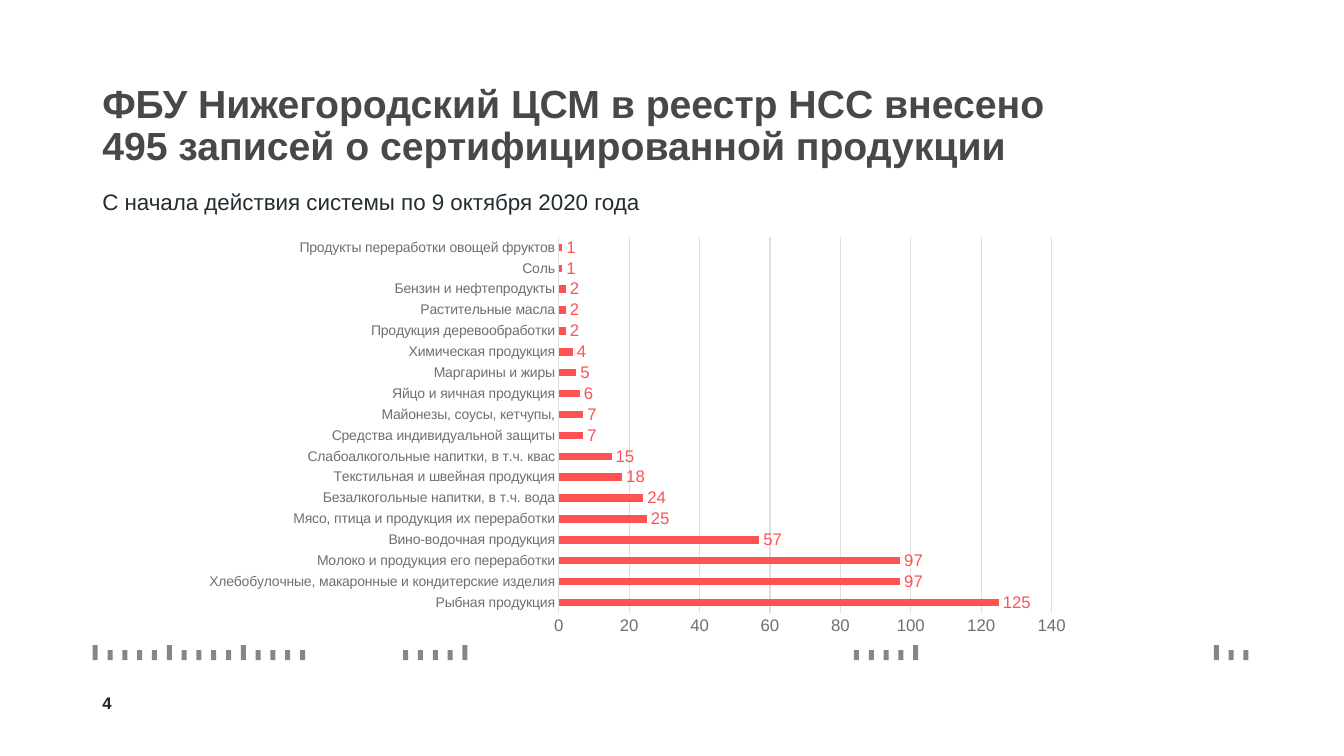
from dataclasses import dataclass

from lxml import etree
from pptx import Presentation
from pptx.chart.data import CategoryChartData
from pptx.dml.color import RGBColor
from pptx.enum.chart import XL_CHART_TYPE, XL_LABEL_POSITION, XL_TICK_MARK
from pptx.enum.shapes import MSO_SHAPE
from pptx.enum.text import MSO_ANCHOR, MSO_AUTO_SIZE
from pptx.oxml.ns import qn
from pptx.slide import Slide
from pptx.text.text import Font
from pptx.util import Pt

BAR = XL_CHART_TYPE.BAR_CLUSTERED
OUTSIDE = XL_LABEL_POSITION.OUTSIDE_END
NO_TICK = XL_TICK_MARK.NONE
RECT = MSO_SHAPE.RECTANGLE
TOP = MSO_ANCHOR.TOP
MIDDLE = MSO_ANCHOR.MIDDLE
GROW = MSO_AUTO_SIZE.SHAPE_TO_FIT_TEXT

FACE = "Arial"
COLORS = {
    "title": "484848",
    "sub": "222D32",
    "page": "212121",
    "axis": "6F6F6F",
    "grid": "DEDEDE",
    "bar": "FF5252",
    "mark": "868686",
}


@dataclass
class Label:
    text: str
    left: float
    top: float
    width: float
    height: float
    size: float
    color: str
    bold: bool = False
    anchor: MSO_ANCHOR = TOP
    grow: bool = False
    space: float = 1.0


@dataclass
class Ruler:
    left: float
    count: int
    tall: tuple[int, ...]


LABELS = [
    Label("ФБУ Нижегородский ЦСМ в реестр НСС внесено \v"
          "495 записей о сертифицированной продукции",
          66, 57, 828, 113.5, 28, "title", bold=True, space=0.9),
    Label("4", 66, 487.5, 51, 29, 12, "page", bold=True, anchor=MIDDLE),
    Label("С начала действия системы по 9 октября 2020 года",
          66, 131, 490, 26.6, 16, "sub", grow=True),
]

RULERS = [
    Ruler(66.2, 15, (0, 5, 10)),
    Ruler(288, 5, (4,)),
    Ruler(610, 5, (4,)),
    Ruler(867, 3, (0,)),
]
STEP = 10.58
BASE = 471.6

GOODS = {
    "Рыбная продукция": 125,
    "Хлебобулочные, макаронные и кондитерские изделия": 97,
    "Молоко и продукция его переработки": 97,
    "Вино-водочная продукция": 57,
    "Мясо, птица и продукция их переработки": 25,
    "Безалкогольные напитки, в т.ч. вода": 24,
    "Текстильная и швейная продукция": 18,
    "Слабоалкогольные напитки, в т.ч. квас": 15,
    "Средства индивидуальной защиты": 7,
    "Майонезы, соусы, кетчупы,": 7,
    "Яйцо и яичная продукция": 6,
    "Маргарины и жиры": 5,
    "Химическая продукция": 4,
    "Продукция деревообработки": 2,
    "Растительные масла": 2,
    "Бензин и нефтепродукты": 2,
    "Соль": 1,
    "Продукты переработки овощей фруктов": 1,
}
PLOT = {"x": 0.41, "y": 0.02, "w": 0.55, "h": 0.91}


def rgb(name: str) -> RGBColor:
    return RGBColor.from_string(COLORS[name])


def style(font: Font, size: float, color: str, bold: bool = False) -> None:
    font.name = FACE
    font.size = Pt(size)
    font.bold = bold
    font.color.rgb = rgb(color)


def add_label(slide: Slide, label: Label) -> None:
    box = slide.shapes.add_textbox(
        Pt(label.left), Pt(label.top), Pt(label.width), Pt(label.height))
    frame = box.text_frame
    frame.word_wrap = True
    frame.vertical_anchor = label.anchor
    if label.grow:
        frame.auto_size = GROW
    frame.text = label.text
    para = frame.paragraphs[0]
    para.line_spacing = label.space
    for run in para.runs:
        style(run.font, label.size, label.color, label.bold)


def add_ruler(slide: Slide, ruler: Ruler) -> None:
    for i in range(ruler.count):
        height = 10.8 if i in ruler.tall else 7.2
        mark = slide.shapes.add_shape(
            RECT, Pt(ruler.left + i * STEP), Pt(BASE - height),
            Pt(3.6), Pt(height))
        mark.shadow.inherit = False
        mark.fill.solid()
        mark.fill.fore_color.rgb = rgb("mark")
        mark.line.fill.background()


def add_bars(slide: Slide) -> None:
    data = CategoryChartData()
    data.categories = list(GOODS)
    data.add_series("Series 1", list(GOODS.values()))
    chart = slide.shapes.add_chart(
        BAR, Pt(136.8), Pt(163.4), Pt(640), Pt(295.2), data).chart
    chart.has_title = False
    chart.has_legend = False
    style(chart.font, 10, "page")

    plot = chart.plots[0]
    plot.gap_width = 182
    plot.vary_by_categories = False
    plot.has_data_labels = True
    tags = plot.data_labels
    tags.show_value = True
    tags.position = OUTSIDE
    style(tags.font, 12, "bar")
    fill = plot.series[0].format.fill
    fill.solid()
    fill.fore_color.rgb = rgb("bar")

    goods, scale = chart.category_axis, chart.value_axis
    for axis, size in ((goods, 10), (scale, 12)):
        axis.major_tick_mark = NO_TICK
        axis.minor_tick_mark = NO_TICK
        style(axis.tick_labels.font, size, "axis")
    scale.minimum_scale = 0
    scale.maximum_scale = 140
    scale.major_unit = 20
    scale.has_major_gridlines = True
    scale.format.line.fill.background()
    for line in (goods.format.line, scale.major_gridlines.format.line):
        line.width = Pt(0.75)
        line.color.rgb = rgb("grid")

    area = chart.element.find(".//" + qn("c:plotArea"))
    for old in area.findall(qn("c:layout")):
        area.remove(old)
    layout = etree.Element(qn("c:layout"))
    manual = etree.SubElement(layout, qn("c:manualLayout"))
    parts = {"layoutTarget": "inner", "xMode": "edge", "yMode": "edge", **PLOT}
    for key, value in parts.items():
        etree.SubElement(manual, qn("c:" + key)).set("val", str(value))
    area.insert(0, layout)


def main() -> None:
    deck = Presentation()
    deck.slide_width = Pt(960)
    deck.slide_height = Pt(540)
    slide = deck.slides.add_slide(deck.slide_layouts[6])
    for ruler in RULERS:
        add_ruler(slide, ruler)
    add_bars(slide)
    for label in LABELS:
        add_label(slide, label)
    deck.save("out.pptx")


if __name__ == "__main__":
    main()
